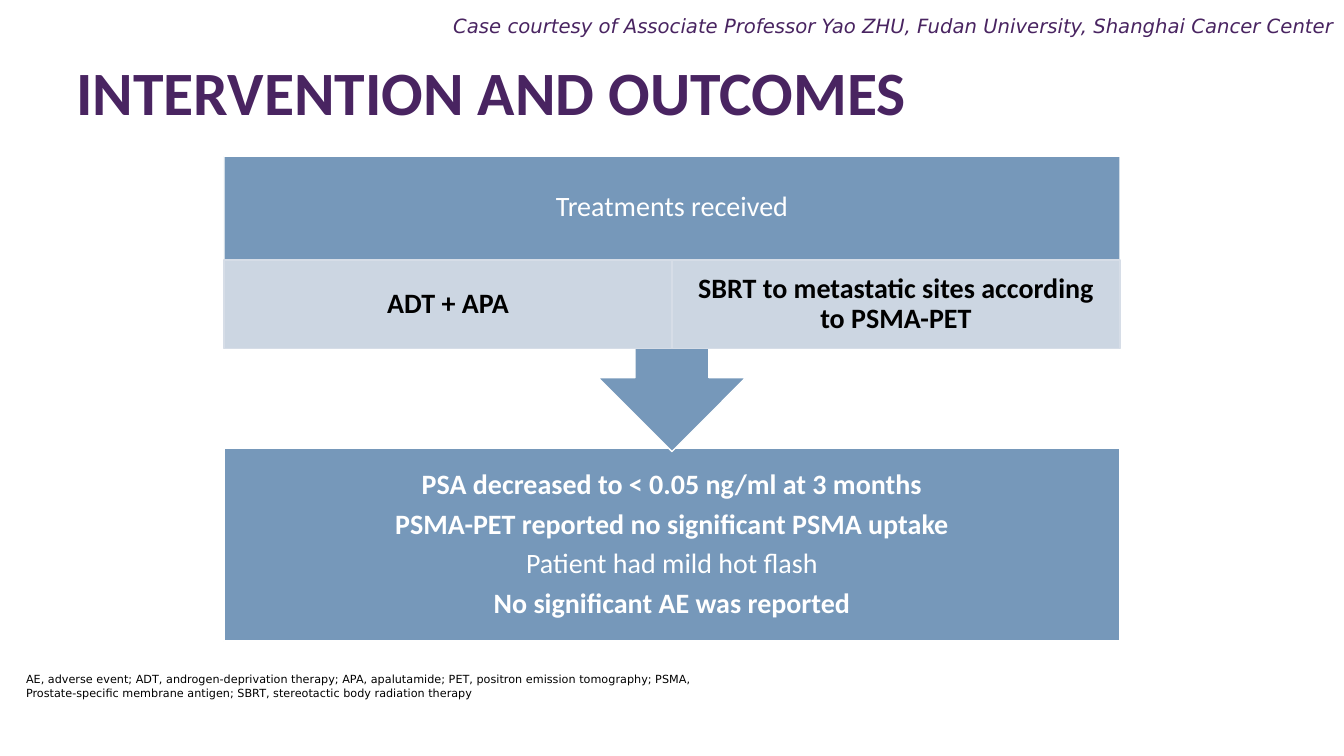
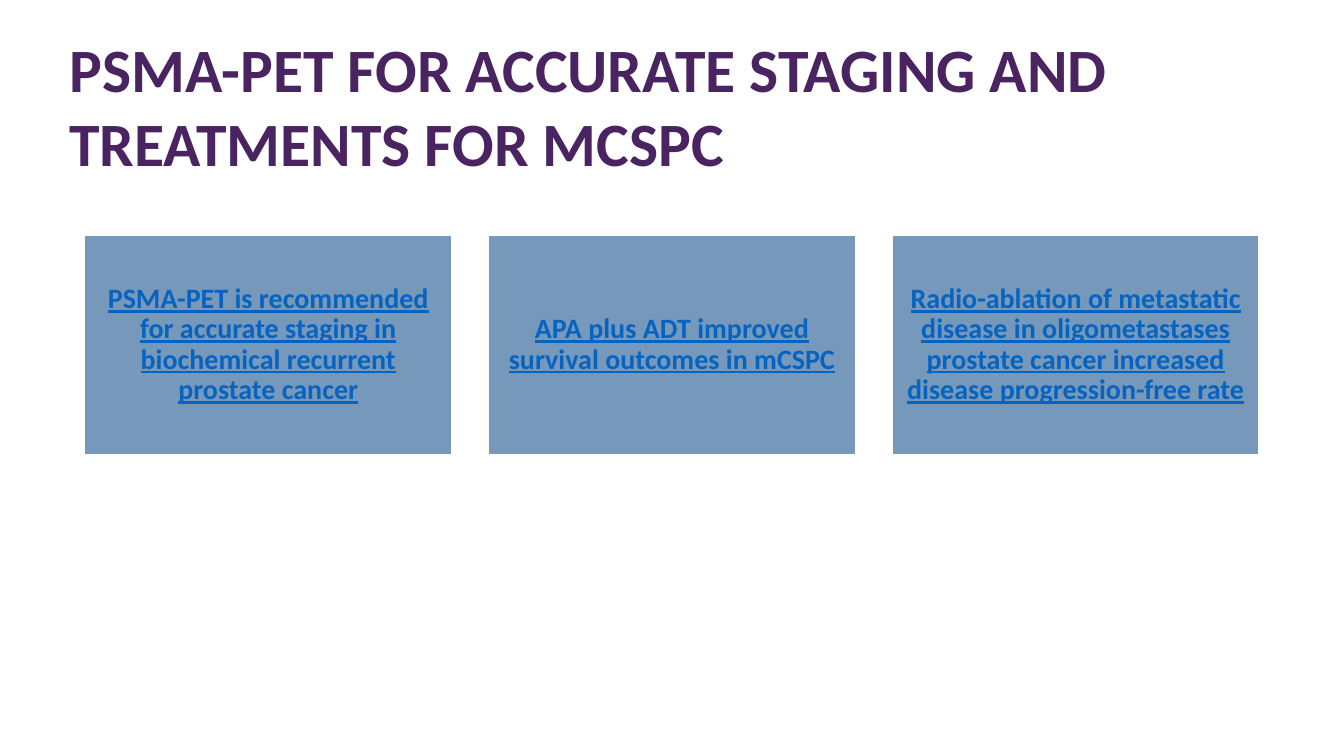
from pptx import Presentation
from pptx.dml.color import RGBColor
from pptx.enum.shapes import MSO_SHAPE
from pptx.enum.text import MSO_ANCHOR, PP_ALIGN
from pptx.util import Inches, Pt

PURPLE = RGBColor(0x49, 0x24, 0x61)
STEEL = RGBColor(0x76, 0x98, 0xBA)
PALE = RGBColor(0xCC, 0xD6, 0xE2)
PALE_EDGE = RGBColor(0xD6, 0xDD, 0xE7)
WHITE = RGBColor(0xFF, 0xFF, 0xFF)
BLACK = RGBColor(0, 0, 0)
LINK_BLUE = RGBColor(0x05, 0x63, 0xC1)

RECTANGLE = MSO_SHAPE.RECTANGLE
CALLOUT = MSO_SHAPE.DOWN_ARROW_CALLOUT
TOP, MIDDLE = MSO_ANCHOR.TOP, MSO_ANCHOR.MIDDLE
LEFT, CENTER, RIGHT = PP_ALIGN.LEFT, PP_ALIGN.CENTER, PP_ALIGN.RIGHT

SLIDE_WIDTH, SLIDE_HEIGHT = 13.33, 7.5
HEADING_FONT, NOTE_FONT = "Calibri", "DejaVu Sans"


def add_text(slide, box, text, size, color, font=HEADING_FONT, bold=False,
             italic=False, align=LEFT, anchor=MIDDLE, spacing=1.0):
    shape = slide.shapes.add_textbox(*map(Inches, box))
    frame = shape.text_frame
    frame.word_wrap = True
    frame.vertical_anchor = anchor
    paragraph = frame.paragraphs[0]
    paragraph.text = text
    paragraph.alignment = align
    paragraph.line_spacing = spacing
    paragraph.font.name = font
    paragraph.font.size = Pt(size)
    paragraph.font.bold = bold
    paragraph.font.italic = italic
    paragraph.font.color.rgb = color


def add_block(slide, kind, box, lines, fill=STEEL, edge=WHITE, color=WHITE,
              margins=(0.16, 0.16, 0.16), underline=False):
    """Draw a filled block; lines are (text, bold), margins are side, top, bottom."""
    shape = slide.shapes.add_shape(kind, *map(Inches, box))
    shape.shadow.inherit = False
    shape.fill.solid()
    shape.fill.fore_color.rgb = fill
    shape.line.color.rgb = edge
    shape.line.width = Pt(1)
    frame = shape.text_frame
    frame.word_wrap = True
    frame.vertical_anchor = MIDDLE
    side, top, bottom = map(Inches, margins)
    frame.margin_left = frame.margin_right = side
    frame.margin_top, frame.margin_bottom = top, bottom
    for index, (text, bold) in enumerate(lines):
        paragraph = frame.add_paragraph() if index else frame.paragraphs[0]
        paragraph.text = text
        paragraph.alignment = CENTER
        paragraph.line_spacing = 0.9
        paragraph.space_after = Pt(6.6)
        paragraph.font.name = HEADING_FONT
        paragraph.font.size = Pt(20)
        paragraph.font.bold = bold
        paragraph.font.underline = underline
        paragraph.font.color.rgb = color


presentation = Presentation()
presentation.slide_width = Inches(SLIDE_WIDTH)
presentation.slide_height = Inches(SLIDE_HEIGHT)
blank = presentation.slide_layouts[6]

# Slide 1: treatments leading to outcomes
slide = presentation.slides.add_slide(blank)
add_text(slide, (0.66, 0.42, 12.02, 1.05), "INTERVENTION AND OUTCOMES",
         44, PURPLE, bold=True, spacing=0.9)
add_text(slide, (3.54, 0.1, SLIDE_WIDTH - 3.54, 0.3),
         "Case courtesy of Associate Professor Yao ZHU, Fudan University, "
         "Shanghai Cancer Center",
         14, PURPLE, font=NOTE_FONT, italic=True, align=RIGHT)
add_text(slide, (0.16, 6.6, 6.88, 0.4),
         "AE, adverse event; ADT, androgen-deprivation therapy; APA, apalutamide; "
         "PET, positron emission tomography; PSMA, Prostate-specific membrane "
         "antigen; SBRT, stereotactic body radiation therapy",
         8, BLACK, font=NOTE_FONT, spacing=1.1)

flow_width = SLIDE_WIDTH * 2 / 3
flow_left = (SLIDE_WIDTH - flow_width) / 2
flow_top, header_height, band_height = 1.55, 1.03, 0.88

add_block(slide, RECTANGLE, (flow_left, 4.45, flow_width, 1.91), [
    ("PSA decreased to < 0.05 ng/ml at 3 months", True),
    ("PSMA-PET reported no significant PSMA uptake", True),
    ("Patient had mild hot flash", False),
    ("No significant AE was reported", True),
])
# The bottom margin keeps the heading above the treatment band
add_block(slide, CALLOUT, (flow_left, flow_top, flow_width, 2.93),
          [("Treatments received", False)],
          margins=(0.16, 0.16, 0.16 + band_height))

treatments = ["ADT + APA", "SBRT to metastatic sites according to PSMA-PET"]
band_width = flow_width / len(treatments)
for column, treatment in enumerate(treatments):
    add_block(slide, RECTANGLE,
              (flow_left + column * band_width, flow_top + header_height,
               band_width, band_height),
              [(treatment, True)], fill=PALE, edge=PALE_EDGE, color=BLACK,
              margins=(0.16, 0.03, 0.03))

# Slide 2: three evidence cards
slide = presentation.slides.add_slide(blank)
add_text(slide, (0.59, 0.26, 12.12, 1.58),
         "PSMA-PET FOR ACCURATE STAGING AND TREATMENTS FOR MCSPC",
         44, PURPLE, bold=True, anchor=TOP)

cards = [
    "PSMA-PET is recommended for accurate staging in biochemical recurrent "
    "prostate cancer",
    "APA plus ADT improved survival outcomes in mCSPC",
    "Radio-ablation of metastatic disease in oligometastases prostate cancer "
    "increased disease progression-free rate",
]
card_width = 3.64
card_height = card_width * 0.6
card_pitch = card_width * 1.1
cards_left = (SLIDE_WIDTH - card_pitch * (len(cards) - 1) - card_width) / 2
for column, card in enumerate(cards):
    add_block(slide, RECTANGLE,
              (cards_left + column * card_pitch, 2.33, card_width, card_height),
              [(card, True)], color=LINK_BLUE, margins=(0.08, 0.08, 0.08),
              underline=True)

presentation.save("out.pptx")
